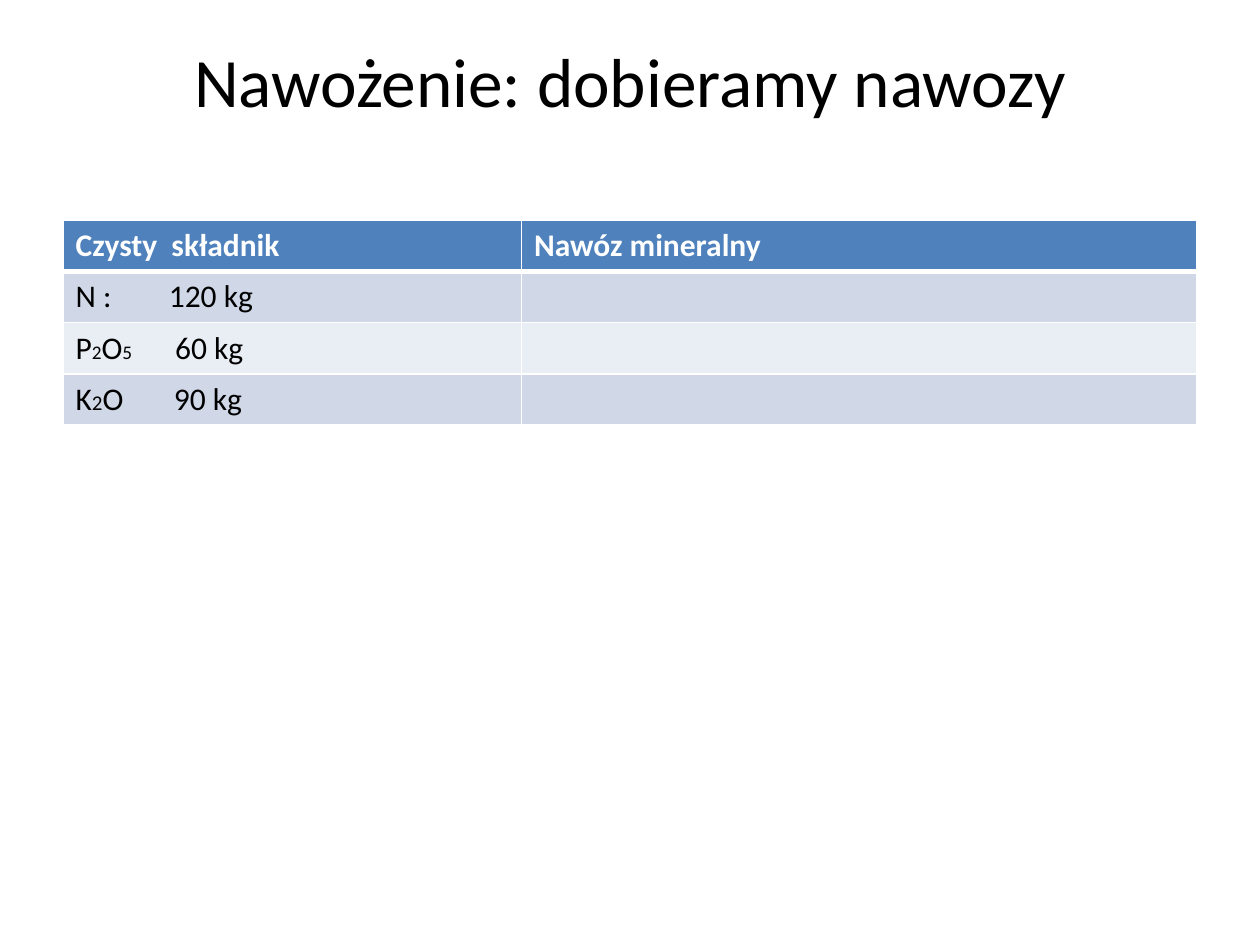
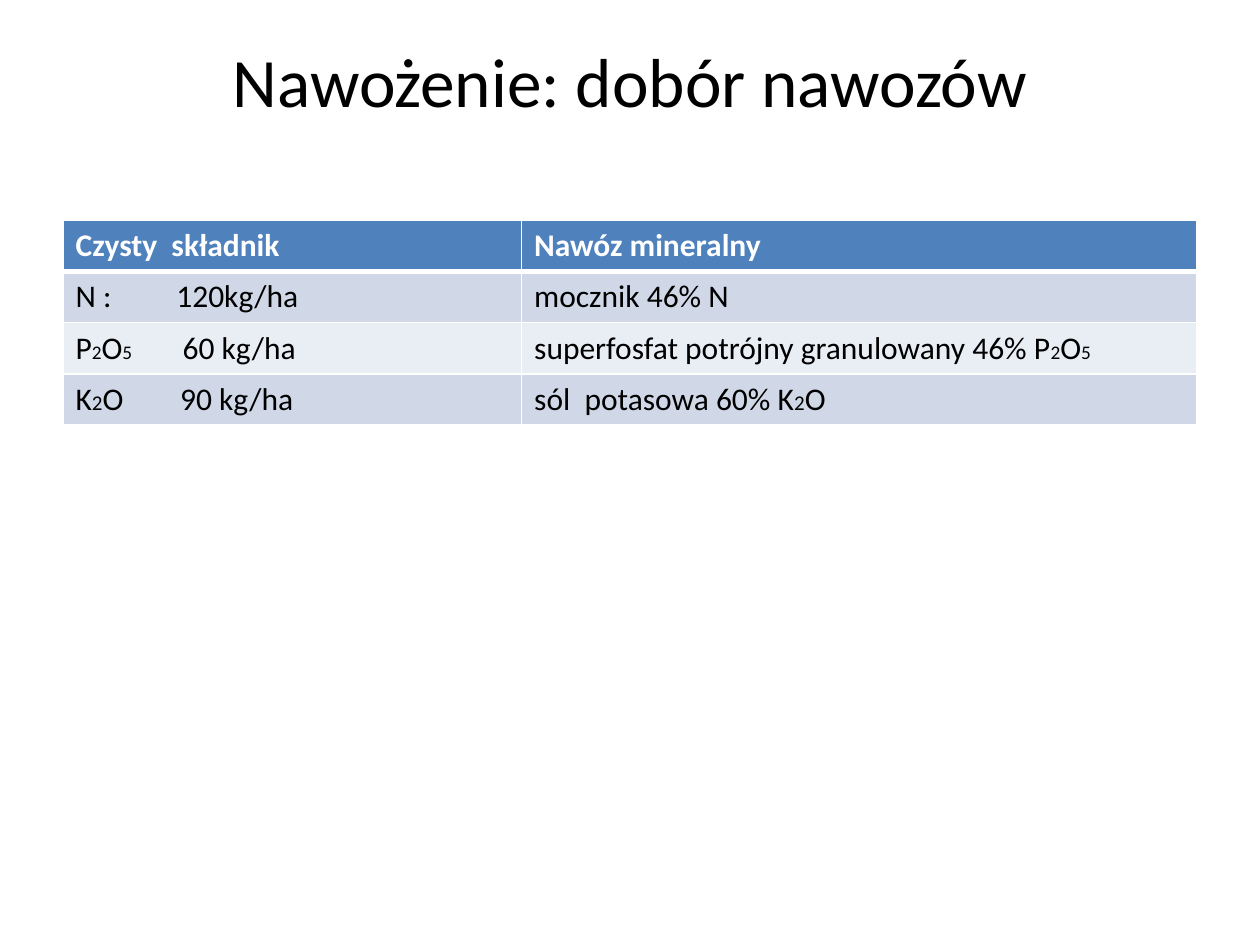
"""Build two slides that match pure nutrients with mineral fertilisers."""
import pptx
import pptx.dml.color
import pptx.enum.text
import pptx.oxml.ns
import pptx.util
from lxml import etree

Inches = pptx.util.Inches
Pt = pptx.util.Pt
qn = pptx.oxml.ns.qn

FONT = "Calibri"
BLACK, WHITE = "000000", "FFFFFF"
HEADER_FILL = "4F81BD"
BAND_FILLS = ("D0D8E8", "E9EDF4")
HEADERS = ("Czysty  składnik", "Nawóz mineralny")
COLUMN_WIDTHS = (3.64, 5.36)
TABLE_HEIGHT = 1.62
SUBSCRIPT_SIZES = (18, 11, 12)


def rgb(value):
    return pptx.dml.color.RGBColor.from_string(value)


def format_run(r, size, color, bold=False):
    r.font.name = FONT
    r.font.size = Pt(size)
    r.font.bold = bold
    r.font.color.rgb = rgb(color)


def add_title(s, text):
    title = s.shapes.title
    title.left, title.top = Inches(0.5), Inches(0.3)
    title.width, title.height = Inches(9), Inches(1.25)
    tf = title.text_frame
    tf.text = text
    tf.vertical_anchor = pptx.enum.text.MSO_ANCHOR.TOP
    tf.margin_top = 0
    p = tf.paragraphs[0]
    p.alignment = pptx.enum.text.PP_ALIGN.CENTER
    format_run(p.runs[0], 39.6, BLACK)


def set_borders(cell, top, bottom):
    tc_pr = cell._tc.get_or_add_tcPr()
    for tag, width in (("lnL", 1), ("lnR", 1), ("lnT", top), ("lnB", bottom)):
        line = etree.SubElement(tc_pr, qn(f"a:{tag}"), w=str(Pt(width)))
        fill = etree.SubElement(line, qn("a:solidFill"))
        etree.SubElement(fill, qn("a:srgbClr"), val=WHITE)


def set_tab(p, position):
    tabs = etree.SubElement(p._p.get_or_add_pPr(), qn("a:tabLst"))
    etree.SubElement(tabs, qn("a:tab"), pos=str(Inches(position)), algn="l")


def fill_cell(cell, row, text, tab=None):
    """Write text in which underscores enclose each subscript."""
    header = row == 0
    set_borders(cell, 3 if row == 1 else 1, 3 if header else 1)
    cell.fill.solid()
    cell.fill.fore_color.rgb = rgb(HEADER_FILL if header else BAND_FILLS[(row - 1) % 2])
    p = cell.text_frame.paragraphs[0]
    if tab:
        set_tab(p, tab)
    for i, part in enumerate(text.split("_")):
        if part:
            r = p.add_run()
            r.text = part
            size = SUBSCRIPT_SIZES[row - 1] if i % 2 else 18
            format_run(r, size, WHITE if header else BLACK, header)


def add_fertiliser_table(s, rows, tabs):
    cells = [HEADERS, *rows]
    table = s.shapes.add_table(len(cells), 2, Inches(0.5), Inches(1.75),
                               Inches(9), Inches(TABLE_HEIGHT)).table
    for column, width in zip(table.columns, COLUMN_WIDTHS):
        column.width = Inches(width)
    for i, (nutrient, fertiliser) in enumerate(cells):
        table.rows[i].height = Inches(TABLE_HEIGHT / len(cells))
        fill_cell(table.cell(i, 0), i, nutrient, tabs[i - 1] if i else None)
        fill_cell(table.cell(i, 1), i, fertiliser)


def add_fertiliser_slide(prs, title, rows, tabs):
    s = prs.slides.add_slide(prs.slide_layouts[5])
    add_title(s, title)
    add_fertiliser_table(s, rows, tabs)


def main():
    prs = pptx.Presentation()
    prs.slide_width, prs.slide_height = Inches(10), Inches(7.5)
    add_fertiliser_slide(prs, "Nawożenie: dobieramy nawozy", [
        ("N :\t120 kg", ""),
        ("P_2_O_5_\t60 kg", ""),
        ("K_2_O\t90 kg", ""),
    ], (0.74, 0.79, 0.78))
    add_fertiliser_slide(prs, "Nawożenie: dobór nawozów", [
        ("N :\t120kg/ha", "mocznik 46% N"),
        ("P_2_O_5_\t60 kg/ha", "superfosfat potrójny granulowany 46% P_2_O_5_"),
        ("K_2_O\t90 kg/ha", "sól  potasowa 60% K_2_O"),
    ], (0.8, 0.85, 0.83))
    prs.save("out.pptx")


if __name__ == "__main__":
    main()
